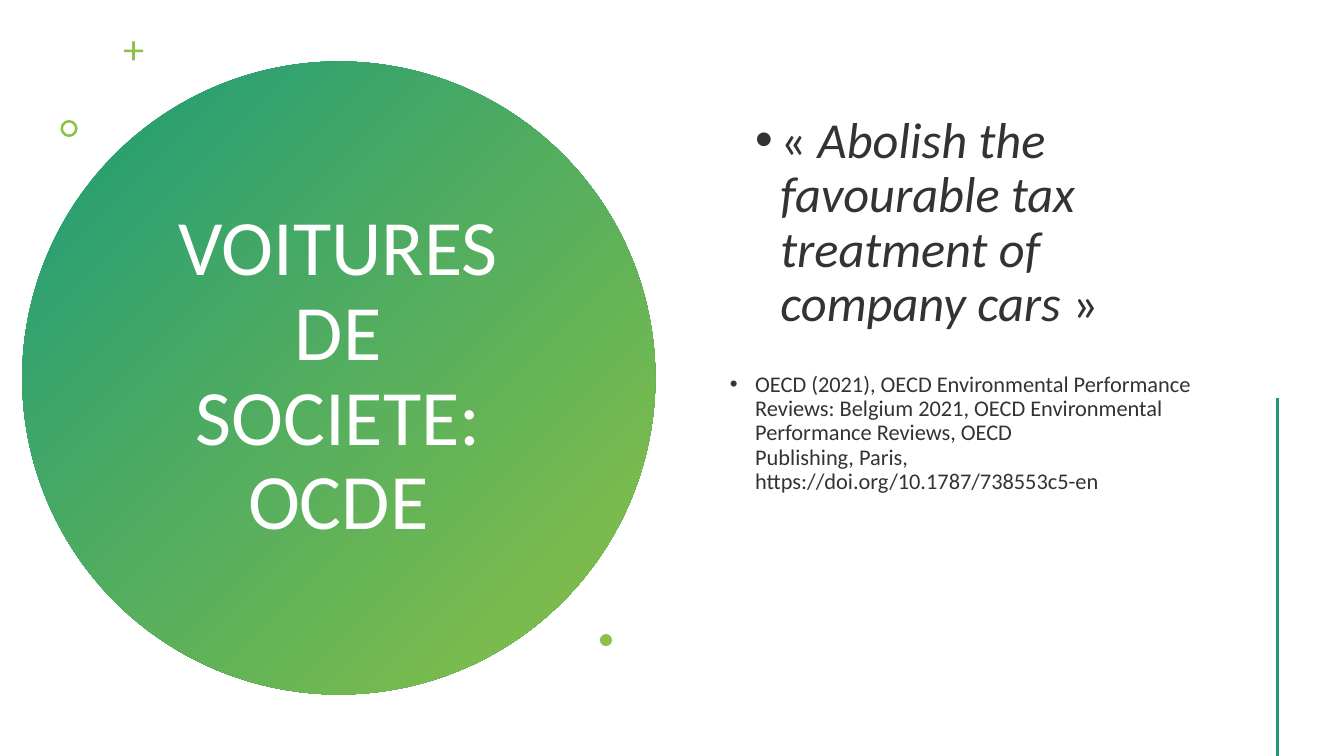
from lxml import etree
from pptx import Presentation
from pptx import util as u
from pptx.dml import color
from pptx.enum import shapes, text
from pptx.oxml import ns

TEAL, GREEN, INK, WHITE = "1D9A78", "8BC145", "333333", "FFFFFF"
FONT = "Calibri"

HEADING = {"runs": [("VOITURES DE SOCIETE: OCDE", False)], "at": (1.36, 1.41, 3.99, 4.67)}
BODY_AT = (6.89, 0.57, 5.22, 6.38)
BODY_TOP_MARGIN = 0.57
QUOTE = {
    "runs": [("« ", False), ("Abolish the favourable tax treatment of company cars ", True), ("»", False)],
    "size": 36, "before": 0, "indent": 0.75,
}
REFERENCE = {
    "runs": [
        ("OECD (2021), OECD Environmental Performance Reviews: Belgium 2021, "
         "OECD Environmental Performance Reviews, OECD\n"
         "Publishing, Paris, https://doi.org/10.1787/738553c5-en", False),
    ],
    "size": 16, "before": 29, "indent": 0.5,
}
DISC_AT = (0.22, 0.61, 6.28, 6.28)
ORNAMENTS = [
    (shapes.MSO_SHAPE.CROSS, (1.23, 0.41, 0.19, 0.19), 0.43),
    (shapes.MSO_SHAPE.DONUT, (0.6, 1.19, 0.17, 0.17), 0.15),
    (shapes.MSO_SHAPE.OVAL, (5.95, 6.29, 0.12, 0.12), None),
]
RULE_X, RULE_TOP, RULE_BOTTOM = 12.67, 3.95, 7.5


def rgb(code):
    return color.RGBColor.from_string(code)


def inches(box):
    return [u.Inches(value) for value in box]


def place(holder, box):
    holder.left, holder.top, holder.width, holder.height = inches(box)


def write(paragraph, runs, size, ink, align, before=0, after=0, indent=None):
    paragraph.alignment = align
    paragraph.line_spacing = 0.9
    paragraph.space_before, paragraph.space_after = u.Pt(before), u.Pt(after)
    for words, italic in runs:
        for index, line in enumerate(words.split("\n")):
            if index:
                paragraph.add_line_break()
            run = paragraph.add_run()
            run.text = line
            run.font.name, run.font.size, run.font.italic = FONT, u.Pt(size), italic
            run.font.color.rgb = rgb(ink)
    if indent is not None:
        properties = paragraph._p.get_or_add_pPr()
        properties.set("marL", str(u.Inches(indent)))
        properties.set("indent", str(u.Inches(-0.25)))
        etree.SubElement(properties, ns.qn("a:buFont")).set("typeface", "Arial")
        etree.SubElement(properties, ns.qn("a:buChar")).set("char", "•")


def add_plain_shape(slide, kind, box):
    shape = slide.shapes.add_shape(kind, *inches(box))
    shape.shadow.inherit = False
    shape.line.fill.background()
    return shape


def main():
    deck = Presentation()
    deck.slide_width, deck.slide_height = inches((13.33, 7.5))
    slide = deck.slides.add_slide(deck.slide_layouts[1])
    title, body = slide.shapes.title, slide.placeholders[1]

    disc = add_plain_shape(slide, shapes.MSO_SHAPE.OVAL, DISC_AT)
    disc.fill.gradient()
    disc.fill.gradient_angle = 315
    for stop, position, code in zip(disc.fill.gradient_stops, (0, 1), (TEAL, GREEN)):
        stop.position, stop.color.rgb = position, rgb(code)
    title.element.addprevious(disc.element)

    place(title, HEADING["at"])
    heading = title.text_frame
    heading.word_wrap, heading.auto_size = True, text.MSO_AUTO_SIZE.NONE
    heading.vertical_anchor = text.MSO_ANCHOR.MIDDLE
    heading.margin_left = heading.margin_right = u.Inches(0.15)
    write(heading.paragraphs[0], HEADING["runs"], 56, WHITE, text.PP_ALIGN.CENTER, after=6)

    place(body, BODY_AT)
    points = body.text_frame
    points.word_wrap, points.auto_size = True, text.MSO_AUTO_SIZE.NONE
    points.vertical_anchor = text.MSO_ANCHOR.TOP
    points.margin_top = u.Inches(BODY_TOP_MARGIN)
    write(points.paragraphs[0], ink=INK, align=text.PP_ALIGN.LEFT, **QUOTE)
    write(points.add_paragraph(), ink=INK, align=text.PP_ALIGN.LEFT, **REFERENCE)

    for kind, box, adjustment in ORNAMENTS:
        ornament = add_plain_shape(slide, kind, box)
        ornament.fill.solid()
        ornament.fill.fore_color.rgb = rgb(GREEN)
        if adjustment is not None:
            ornament.adjustments[0] = adjustment

    rule = slide.shapes.add_connector(
        shapes.MSO_CONNECTOR.STRAIGHT, *inches((RULE_X, RULE_TOP, RULE_X, RULE_BOTTOM)))
    rule.line.color.rgb, rule.line.width = rgb(TEAL), u.Pt(2)
    etree.SubElement(rule.element.spPr, ns.qn("a:effectLst"))

    deck.save("out.pptx")


if __name__ == "__main__":
    main()
